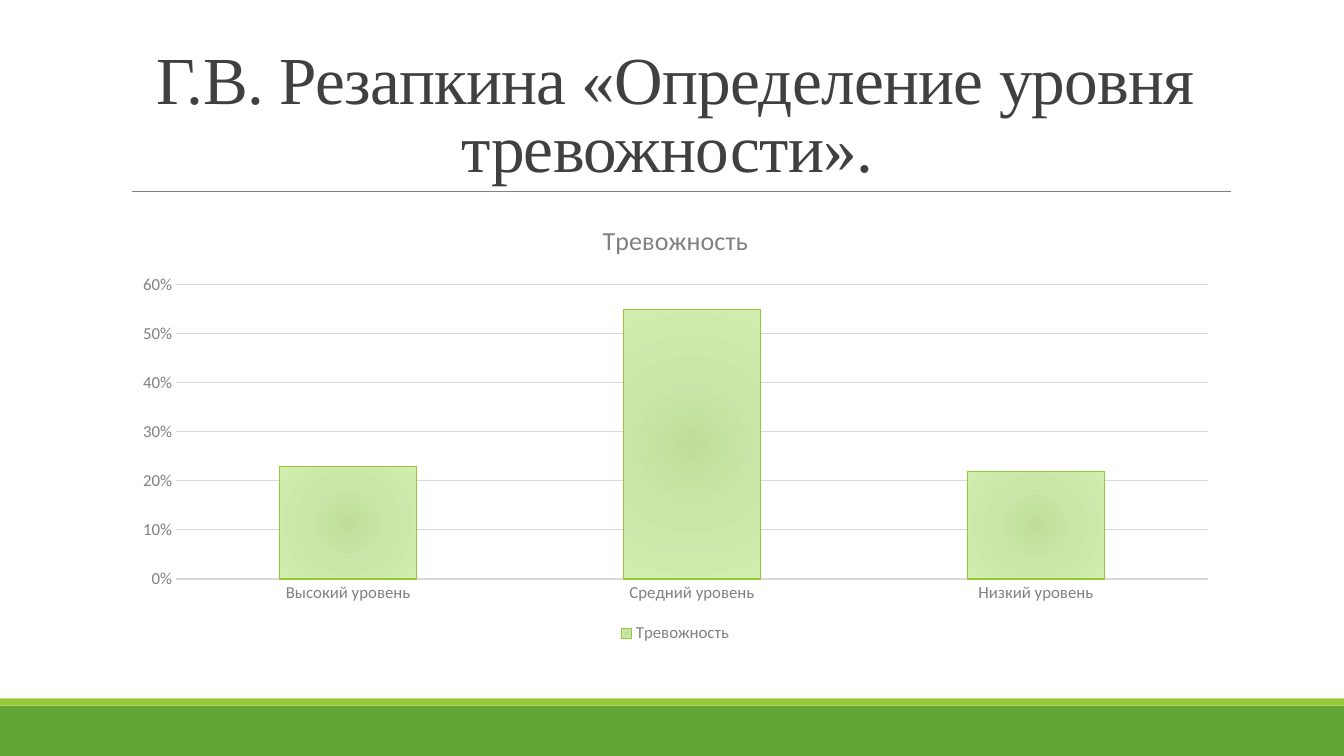
from pptx import Presentation
from pptx.chart.data import CategoryChartData
from pptx.dml.color import RGBColor
from pptx.enum.chart import XL_CHART_TYPE as CT, XL_LEGEND_POSITION as LP, XL_TICK_MARK as TM
from pptx.enum.shapes import MSO_CONNECTOR as CN, MSO_SHAPE as MS
from pptx.enum.text import MSO_ANCHOR as MA, PP_ALIGN as PA
from pptx.oxml import parse_xml
from pptx.oxml.ns import nsdecls
from pptx.util import Inches, Pt
from lxml.etree import SubElement
from pptx.oxml.ns import qn

TITLE = "Г.В. Резапкина «Определение уровня тревожности». "
SERIES = "Тревожность"
LEVELS = {"Высокий уровень": 0.23, "Средний уровень": 0.55, "Низкий уровень": 0.22}
GREEN, LIME = RGBColor(0x63, 0xA5, 0x37), RGBColor(0x99, 0xCB, 0x38)
DARK, GRAY = RGBColor(0x40, 0x40, 0x40), RGBColor(0x80, 0x80, 0x80)
GRID, BAR_EDGE = RGBColor(0xD9, 0xD9, 0xD9), RGBColor(0x96, 0xC7, 0x37)
BAR_STOPS = [(0, "BEDF97"), (45, "CAE6A9"), (100, "D0EDAE")]
W, H = 13.33, 7.5
LEFT, WIDTH = 1.2, 11
BANDS = [(7, 0.5, GREEN), (6.93, 0.07, LIME)]
RULE_X, RULE_Y = (1.31, 12.21), 1.9
TITLE_TOP, CHART_TOP, CHART_H = 0.31, 2.02, 4.4


def set_font(font, **values):
    """Apply format values to a font, with its colour under the key color."""
    font.color.rgb = values.pop("color")
    for name, value in values.items():
        setattr(font, name, value)


def add_frame(s):
    """Draw the footer bands and the rule under the title."""
    for top, height, color in BANDS:
        sp = s.shapes.add_shape(MS.RECTANGLE, 0, Inches(top), Inches(W), Inches(height))
        sp.shadow.inherit = False
        sp.fill.solid()
        sp.fill.fore_color.rgb = color
        sp.line.fill.background()
    x1, x2 = RULE_X
    rule = s.shapes.add_connector(CN.STRAIGHT, Inches(x1), Inches(RULE_Y), Inches(x2), Inches(RULE_Y))
    rule.line.color.rgb = GRAY
    rule.line.width = Pt(0.5)
    SubElement(rule._element.spPr, qn("a:effectLst"))


def add_title(s):
    """Write the centred title above the rule."""
    box = s.shapes.add_textbox(Inches(LEFT), Inches(TITLE_TOP), Inches(WIDTH), Inches(RULE_Y - TITLE_TOP))
    tf = box.text_frame
    tf.word_wrap = True
    tf.vertical_anchor = MA.BOTTOM
    p = tf.paragraphs[0]
    p.alignment = PA.CENTER
    p.line_spacing = 0.85
    r = p.add_run()
    r.text = TITLE
    set_font(r.font, name="Times New Roman", size=Pt(48), color=DARK)
    r._r.get_or_add_rPr().set("spc", "-50")


def fill_bars(series):
    """Give the bars a radial gradient and a thin edge."""
    stops = "".join(f'<a:gs pos="{pos * 1000}"><a:srgbClr val="{color}"/></a:gs>' for pos, color in BAR_STOPS)
    series.format.line.color.rgb = BAR_EDGE
    series.format.line.width = Pt(0.75)
    to = " ".join(f'{side}="100000"' for side in "ltrb")
    series._element.spPr.insert(0, parse_xml(
        f'<a:gradFill {nsdecls("a")}><a:gsLst>{stops}</a:gsLst>'
        f'<a:path path="circle"><a:fillToRect {to}/></a:path></a:gradFill>'))


def add_level_chart(s):
    """Plot the share of each anxiety level."""
    data = CategoryChartData(number_format="0%")
    data.categories = list(LEVELS)
    data.add_series(SERIES, list(LEVELS.values()))
    chart = s.shapes.add_chart(CT.COLUMN_CLUSTERED, Inches(LEFT), Inches(CHART_TOP),
                               Inches(WIDTH), Inches(CHART_H), data).chart
    set_font(chart.font, name="Calibri", size=Pt(12), color=GRAY)
    chart.has_title = True
    tf = chart.chart_title.text_frame
    tf.text = SERIES
    set_font(tf.paragraphs[0].runs[0].font, name="Calibri", size=Pt(18.6), bold=False, color=GRAY)
    chart.chart_title.include_in_layout = False
    chart.has_legend = True
    chart.legend.position = LP.BOTTOM
    chart.legend.include_in_layout = False
    for axis in (chart.category_axis, chart.value_axis):
        axis.major_tick_mark = axis.minor_tick_mark = TM.NONE
        axis.format.line.fill.background()
    values = chart.value_axis
    values.minimum_scale, values.maximum_scale, values.major_unit = 0, 0.6, 0.1
    values.tick_labels.number_format = "0%"
    values.tick_labels.number_format_is_linked = False
    values.major_gridlines.format.line.color.rgb = GRID
    values.major_gridlines.format.line.width = Pt(0.75)
    plot = chart.plots[0]
    plot.gap_width = 150
    plot.vary_by_categories = False
    fill_bars(plot.series[0])


def main():
    """Build and save the slide."""
    prs = Presentation()
    prs.slide_width, prs.slide_height = Inches(W), Inches(H)
    s = prs.slides.add_slide(prs.slide_layouts[6])
    add_frame(s)
    add_title(s)
    add_level_chart(s)
    prs.save("out.pptx")


if __name__ == "__main__":
    main()
